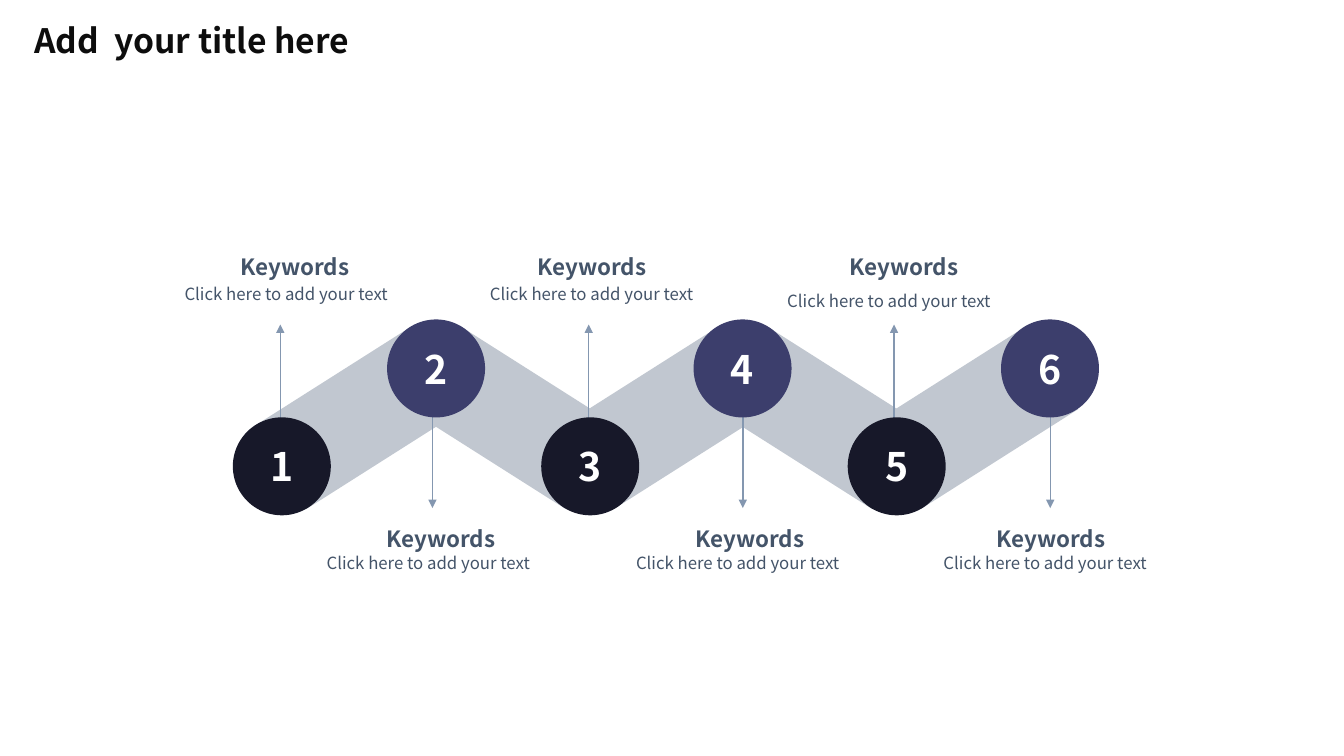
from dataclasses import dataclass

from lxml import etree
from pptx import Presentation, util as u
from pptx.dml.color import RGBColor
from pptx.enum import shapes, text
from pptx.oxml.ns import qn


@dataclass(frozen=True)
class Theme:
    font: str = "Noto Sans CJK JP"
    title: str = "0D0D0D"
    band: str = "C1C7D0"
    arrow: str = "8497B0"
    upper: str = "3C3E6C"
    lower: str = "171829"
    number: str = "FFFFFF"
    body: str = "445469"
    title_size: float = 24
    number_size: float = 28
    keyword_size: float = 16
    caption_size: float = 12


@dataclass(frozen=True)
class Step:
    circle_left: float
    arrow_x: float
    keyword_center: float
    caption_left: float
    caption_top: float


STEPS = [
    Step(166.3, 200.2, 210.6, 131.8, 203),
    Step(276.5, 308.9, 315, 233.3, 394.6),
    Step(386.6, 420.5, 423, 349.9, 203),
    Step(495.4, 530.6, 535.7, 454.3, 394.6),
    Step(605.5, 638.6, 645.8, 562.3, 207.4),
    Step(715, 750.2, 750.6, 673.9, 394.6),
]
DIAMETER = 70
UPPER_TOP, LOWER_TOP = 228.2, 298.1
BAND_TOP, BAND_LENGTH, BAND_ANGLE = 231.8, 133.2, 57.6
KEYWORD_WIDTH, CAPTION_WIDTH = 90, 170


def write(tf, content, *, font, size, color, bold=False, align=text.PP_ALIGN.LEFT):
    p = tf.paragraphs[0]
    p.alignment = align
    r = p.add_run()
    r.text = content
    r.font.name = font
    r.font.size = u.Pt(size)
    r.font.bold = bold
    r.font.color.rgb = RGBColor.from_string(color)


class Slide:
    def __init__(self, prs, theme):
        self.theme = theme
        self.s = prs.slides.add_slide(prs.slide_layouts[5])

    def title(self, content, left, top, width, height):
        sp = self.s.shapes.title
        sp.left, sp.top, sp.width, sp.height = map(u.Pt, (left, top, width, height))
        tf = sp.text_frame
        tf.vertical_anchor = text.MSO_ANCHOR.TOP
        tf.auto_size = text.MSO_AUTO_SIZE.SHAPE_TO_FIT_TEXT
        write(tf, content, font=self.theme.font, size=self.theme.title_size,
              color=self.theme.title, bold=True)

    def shape(self, kind, left, top, width, height, fill, rotation=0):
        sp = self.s.shapes.add_shape(kind, *map(u.Pt, (left, top, width, height)))
        sp.shadow.inherit = False
        sp.fill.solid()
        sp.fill.fore_color.rgb = RGBColor.from_string(fill)
        sp.line.fill.background()
        sp.rotation = rotation
        return sp

    def band(self, center, rotation):
        self.shape(shapes.MSO_SHAPE.RECTANGLE, center - DIAMETER / 2, BAND_TOP,
                   DIAMETER, BAND_LENGTH, self.theme.band, rotation)

    def circle(self, number, left, top, fill):
        sp = self.shape(shapes.MSO_SHAPE.OVAL, left, top, DIAMETER, DIAMETER, fill)
        tf = sp.text_frame
        tf.vertical_anchor = text.MSO_ANCHOR.MIDDLE
        write(tf, str(number), font=self.theme.font, size=self.theme.number_size,
              color=self.theme.number, bold=True, align=text.PP_ALIGN.CENTER)

    def arrow(self, x, tip, end):
        cxn = self.s.shapes.add_connector(
            shapes.MSO_CONNECTOR.STRAIGHT, *map(u.Pt, (x, tip, x, end)))
        cxn.line.color.rgb = RGBColor.from_string(self.theme.arrow)
        cxn.line.width = u.Pt(1)
        etree.SubElement(cxn.line._get_or_add_ln(), qn("a:headEnd"), type="triangle")
        etree.SubElement(cxn._element.spPr, qn("a:effectLst"))

    def label(self, content, left, top, width, height, **style):
        tf = self.s.shapes.add_textbox(*map(u.Pt, (left, top, width, height))).text_frame
        tf.word_wrap = True
        tf.auto_size = text.MSO_AUTO_SIZE.SHAPE_TO_FIT_TEXT
        tf.margin_left = tf.margin_top = tf.margin_right = tf.margin_bottom = 0
        write(tf, content, font=self.theme.font, color=self.theme.body, **style)


def main():
    prs = Presentation()
    prs.slide_width, prs.slide_height = u.Pt(960), u.Pt(540)
    theme = Theme()
    s = Slide(prs, theme)
    s.title("Add  your title here", 17.3, 10.8, 275, 36)

    for i, (a, b) in enumerate(zip(STEPS, STEPS[1:])):
        center = (a.circle_left + b.circle_left + DIAMETER) / 2
        s.band(center, -BAND_ANGLE if i % 2 else BAND_ANGLE)

    for i, step in enumerate(STEPS):
        tip, end = (362.9, 255.6) if i % 2 else (231.8, 339.1)
        s.arrow(step.arrow_x, tip, end)

    for i, step in enumerate(STEPS):
        top, fill = (UPPER_TOP, theme.upper) if i % 2 else (LOWER_TOP, theme.lower)
        s.circle(i + 1, step.circle_left, top, fill)

    for i, step in enumerate(STEPS):
        s.label("Keywords", step.keyword_center - KEYWORD_WIDTH / 2,
                375.1 if i % 2 else 180.7, KEYWORD_WIDTH, 19.4,
                size=theme.keyword_size, bold=True, align=text.PP_ALIGN.CENTER)
        s.label("Click here to add your text", step.caption_left, step.caption_top,
                CAPTION_WIDTH, 14.4, size=theme.caption_size)

    prs.save("out.pptx")


if __name__ == "__main__":
    main()
